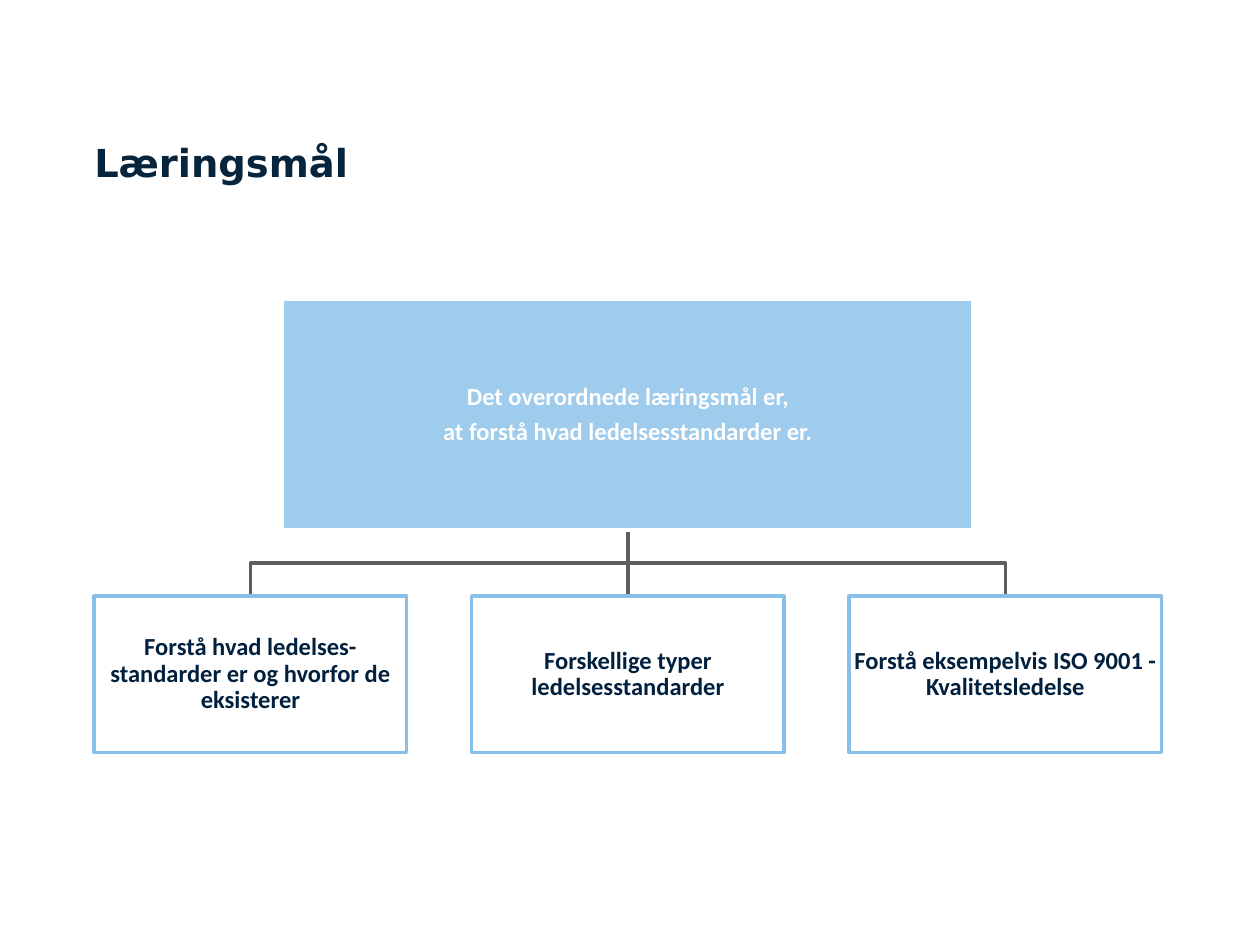
import dataclasses

import lxml.etree
import pptx
import pptx.dml.color
import pptx.enum.shapes
import pptx.enum.text
import pptx.oxml.ns
import pptx.util
from pptx.util import Cm, Pt


@dataclasses.dataclass(frozen=True)
class Theme:
    title_font: str = "DejaVu Sans"
    body_font: str = "Calibri"
    title_size: float = 22
    body_size: float = 14
    title_color: str = "07243D"
    body_color: str = "00203D"
    accent: str = "88BFE8"
    white: str = "FFFFFF"
    branch: str = "5E5E5E"
    line_width: float = 2


def rgb(value):
    return pptx.dml.color.RGBColor.from_string(value)


def apply_format(target, values):
    for name, value in values.items():
        setattr(target, name, value)


class SlideBuilder:
    def __init__(self, slide, theme):
        self.slide = slide
        self.theme = theme

    def style_font(self, font, name, size, color):
        apply_format(font, {"name": name, "size": Pt(size), "bold": True})
        font.color.rgb = rgb(color)

    def style_line(self, line, color):
        line.color.rgb = rgb(color)
        line.width = Pt(self.theme.line_width)

    def style_frame(self, frame, margin, anchor):
        apply_format(frame, {
            "word_wrap": True,
            "auto_size": pptx.enum.text.MSO_AUTO_SIZE.NONE,
            "vertical_anchor": anchor,
            "margin_left": margin, "margin_right": margin,
            "margin_top": margin, "margin_bottom": margin,
        })

    def title(self, text, left, top, width, height):
        shape = self.slide.shapes.title
        apply_format(shape, {"left": left, "top": top, "width": width, "height": height})
        self.style_frame(shape.text_frame, 0, pptx.enum.text.MSO_ANCHOR.TOP)
        shape.text_frame.text = text
        paragraph = shape.text_frame.paragraphs[0]
        paragraph.alignment = pptx.enum.text.PP_ALIGN.LEFT
        self.style_font(paragraph.font, self.theme.title_font,
                        self.theme.title_size, self.theme.title_color)

    def box(self, text, left, top, width, height, fill, opacity, outline, color):
        """Add a translucent rectangle with one centred paragraph per text line."""
        shape = self.slide.shapes.add_shape(
            pptx.enum.shapes.MSO_SHAPE.RECTANGLE, left, top, width, height)
        shape.shadow.inherit = False
        shape.fill.solid()
        shape.fill.fore_color.rgb = rgb(fill)
        fill_color = shape.fill._xPr.find(".//" + pptx.oxml.ns.qn("a:srgbClr"))
        lxml.etree.SubElement(fill_color, pptx.oxml.ns.qn("a:alpha"), val=str(opacity * 1000))
        self.style_line(shape.line, outline)
        self.style_frame(shape.text_frame, Cm(0.02), pptx.enum.text.MSO_ANCHOR.MIDDLE)
        shape.text_frame.text = text
        for paragraph in shape.text_frame.paragraphs:
            apply_format(paragraph, {
                "alignment": pptx.enum.text.PP_ALIGN.CENTER,
                "line_spacing": 0.9,
                "space_after": Pt(0.35 * self.theme.body_size),
            })
            self.style_font(paragraph.font, self.theme.body_font, self.theme.body_size, color)

    def straight_branch(self, x, top, bottom):
        connector = self.slide.shapes.add_connector(
            pptx.enum.shapes.MSO_CONNECTOR.STRAIGHT, x, top, x, bottom)
        self.style_line(connector.line, self.theme.branch)
        lxml.etree.SubElement(connector._element.spPr, pptx.oxml.ns.qn("a:effectLst"))

    def elbow_branch(self, start_x, top, end_x, bottom):
        middle = (top + bottom) // 2
        builder = self.slide.shapes.build_freeform(start_x, top)
        builder.add_line_segments(
            [(start_x, middle), (end_x, middle), (end_x, bottom)], close=False)
        shape = builder.convert_to_shape()
        shape.shadow.inherit = False
        shape.fill.background()
        self.style_line(shape.line, self.theme.branch)


def main():
    presentation = pptx.Presentation()
    presentation.slide_width, presentation.slide_height = Cm(25.4), Cm(19.05)
    theme = Theme()
    slide = presentation.slides.add_slide(presentation.slide_layouts[5])
    builder = SlideBuilder(slide, theme)

    left = Cm(1.9)
    builder.title("Læringsmål", left, Cm(2.8), Cm(21.5), Cm(2.05))

    goals = [
        "Forstå hvad ledelses- standarder er og hvorfor de eksisterer",
        "Forskellige typer ledelsesstandarder",
        "Forstå eksempelvis ISO 9001 - Kvalitetsledelse",
    ]
    goal_width, goal_height, pitch = Cm(6.3), Cm(3.15), Cm(7.61)
    goal_top = Cm(12.02)
    main_top, main_width, main_height = Cm(6.04), Cm(13.92), Cm(4.65)
    main_bottom = main_top + main_height
    goal_lefts = [left + index * pitch for index in range(len(goals))]
    center = left + pitch + goal_width // 2

    for goal_left in goal_lefts:
        end_x = goal_left + goal_width // 2
        if end_x == center:
            builder.straight_branch(center, main_bottom, goal_top)
        else:
            builder.elbow_branch(center, main_bottom, end_x, goal_top)

    builder.box("Det overordnede læringsmål er,\nat forstå hvad ledelsesstandarder er.",
                center - main_width // 2, main_top, main_width, main_height,
                theme.accent, 80, theme.white, theme.white)
    for goal, goal_left in zip(goals, goal_lefts):
        builder.box(goal, goal_left, goal_top, goal_width, goal_height,
                    theme.white, 70, theme.accent, theme.body_color)

    presentation.save("out.pptx")


if __name__ == "__main__":
    main()
